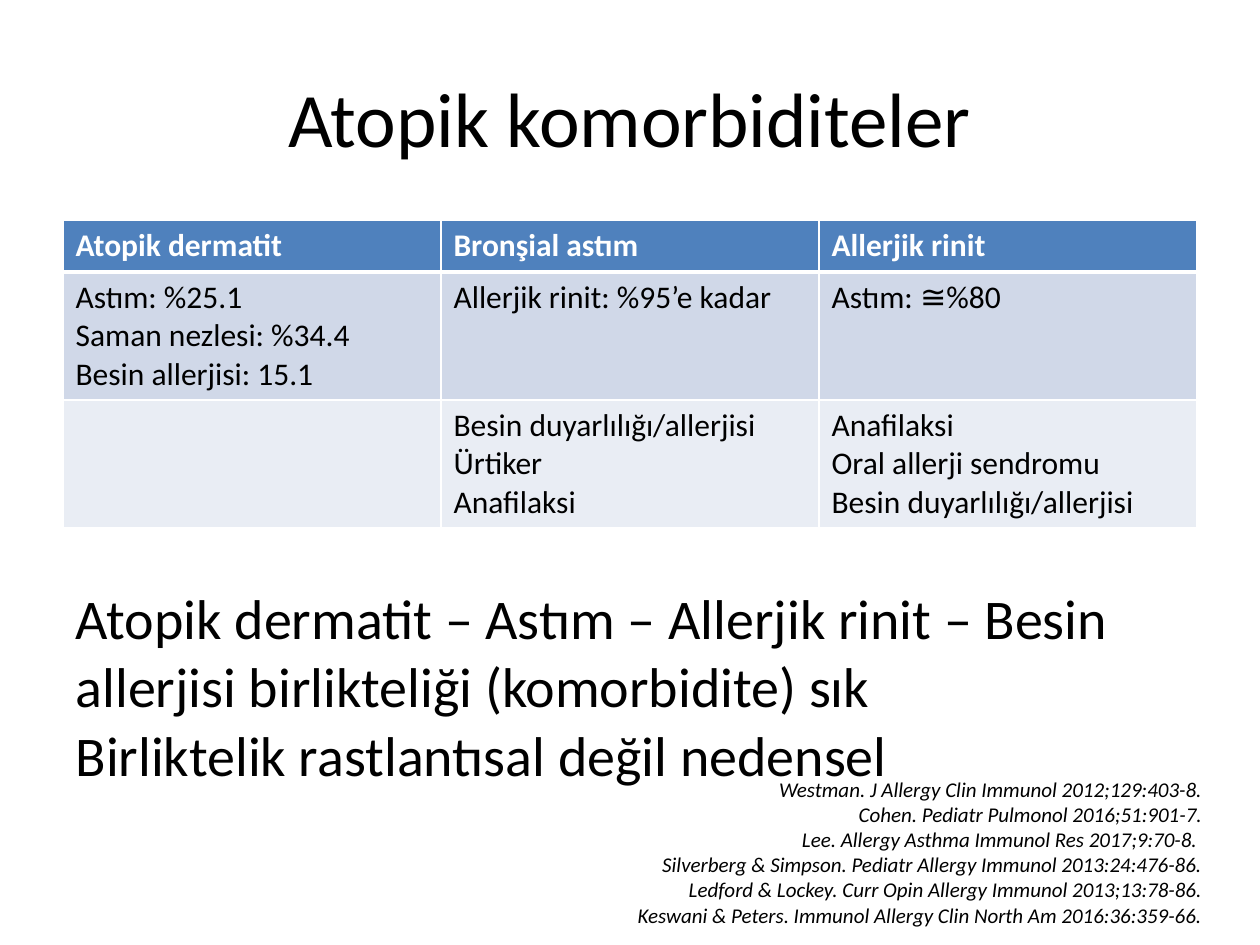
from dataclasses import dataclass

from lxml import etree
from pptx import Presentation
from pptx import util as u
from pptx.dml.color import RGBColor
from pptx.enum import text
from pptx.oxml.ns import qn


@dataclass(frozen=True)
class Theme:
    font: str = "Calibri"
    ink: str = "000000"
    white: str = "FFFFFF"
    header: str = "4F81BD"
    band_dark: str = "D0D8E8"
    band_light: str = "E9EDF4"
    title_size: int = 44
    message_size: int = 32
    table_size: int = 18
    source_size: int = 12


class SlideBuilder:
    def __init__(self, s, theme):
        self.s, self.theme = s, theme

    def place(self, sp, box):
        sp.left, sp.top, sp.width, sp.height = map(u.Inches, box)

    def set_text(self, tf, content, size, color=None, bold=False, italic=False,
                 align=text.PP_ALIGN.LEFT):
        tf.text = content
        for p in tf.paragraphs:
            p.alignment = align
            # The paragraph font also sizes empty cells
            for font in [p.font] + [r.font for r in p.runs]:
                font.name, font.size = self.theme.font, u.Pt(size)
                font.bold, font.italic = bold, italic
                font.color.rgb = RGBColor.from_string(color or self.theme.ink)

    def title(self, content, box):
        sp = self.s.shapes.title
        self.place(sp, box)
        sp.text_frame.vertical_anchor = text.MSO_ANCHOR.MIDDLE
        self.set_text(sp.text_frame, content, self.theme.title_size,
                      align=text.PP_ALIGN.CENTER)

    def textbox(self, content, box, size, **style):
        sp = self.s.shapes.add_textbox(*map(u.Inches, box))
        tf = sp.text_frame
        tf.word_wrap = True
        tf.auto_size = text.MSO_AUTO_SIZE.SHAPE_TO_FIT_TEXT
        self.set_text(tf, content, size, **style)

    def borders(self, cell, widths):
        tcPr = cell._tc.get_or_add_tcPr()
        for i, (side, width) in enumerate(widths.items()):
            ln = etree.Element(qn(f"a:ln{side}"), w=str(u.Pt(width)))
            fill = etree.SubElement(ln, qn("a:solidFill"))
            etree.SubElement(fill, qn("a:srgbClr"), val=self.theme.white)
            tcPr.insert(i, ln)

    def cell(self, cell, content, fill, size, **style):
        cell.fill.solid()
        cell.fill.fore_color.rgb = RGBColor.from_string(fill)
        self.set_text(cell.text_frame, content, size, **style)

    def table(self, rows, message, box, heights):
        t = self.theme
        table = self.s.shapes.add_table(
            len(heights), len(rows[0]), *map(u.Inches, box)).table
        for row, height in zip(table.rows, heights):
            row.height = u.Inches(height)

        # Header and banded rows
        fills = [t.header, t.band_dark, t.band_light]
        for i, (row, fill) in enumerate(zip(rows, fills)):
            head = i == 0
            for j, content in enumerate(row):
                cell = table.cell(i, j)
                self.cell(cell, content, fill, t.table_size, bold=head,
                          color=t.white if head else t.ink)
                self.borders(cell, {"L": 1, "R": 1, "T": 3 if i == 1 else 1,
                                    "B": 3 if head else 1})

        # Full-width spacer row and message row
        for i, (content, size) in enumerate(
                [("", t.table_size), (message, t.message_size)], len(rows)):
            first = table.cell(i, 0)
            first.merge(table.cell(i, len(rows[0]) - 1))
            self.cell(first, content, t.white, size)


ROWS = [
    ["Atopik dermatit", "Bronşial astım", "Allerjik rinit"],
    ["Astım: %25.1\nSaman nezlesi: %34.4\nBesin allerjisi: 15.1",
     "Allerjik rinit: %95’e kadar", "Astım: ≅%80"],
    ["", "Besin duyarlılığı/allerjisi\nÜrtiker\nAnafilaksi",
     "Anafilaksi\nOral allerji sendromu\nBesin duyarlılığı/allerjisi"],
]
MESSAGE = ("Atopik dermatit – Astım – Allerjik rinit – Besin allerjisi "
           "birlikteliği (komorbidite) sık\n"
           "Birliktelik rastlantısal değil nedensel")
SOURCES = [
    "Westman. J Allergy Clin Immunol 2012;129:403-8.",
    "Cohen. Pediatr Pulmonol 2016;51:901-7.",
    "Lee. Allergy Asthma Immunol Res 2017;9:70-8. ",
    "Silverberg & Simpson. Pediatr Allergy Immunol 2013:24:476-86.",
    "Ledford & Lockey. Curr Opin Allergy Immunol 2013;13:78-86.",
    "Keswani & Peters. Immunol Allergy Clin North Am 2016:36:359-66.",
]


def main():
    prs = Presentation()
    prs.slide_width, prs.slide_height = u.Inches(10), u.Inches(7.5)
    theme = Theme()
    b = SlideBuilder(prs.slides.add_slide(prs.slide_layouts[5]), theme)

    b.title("Atopik komorbiditeler", (0.5, 0.3, 9, 1.25))
    b.table(ROWS, MESSAGE, (0.5, 1.75, 9, 4.51),
            [0.41, 1.01, 1.01, 0.41, 1.67])
    # References
    b.textbox("\n".join(SOURCES), (4.84, 6.11, 4.8, 1.31), theme.source_size,
              italic=True, align=text.PP_ALIGN.RIGHT)
    prs.save("out.pptx")


if __name__ == "__main__":
    main()
